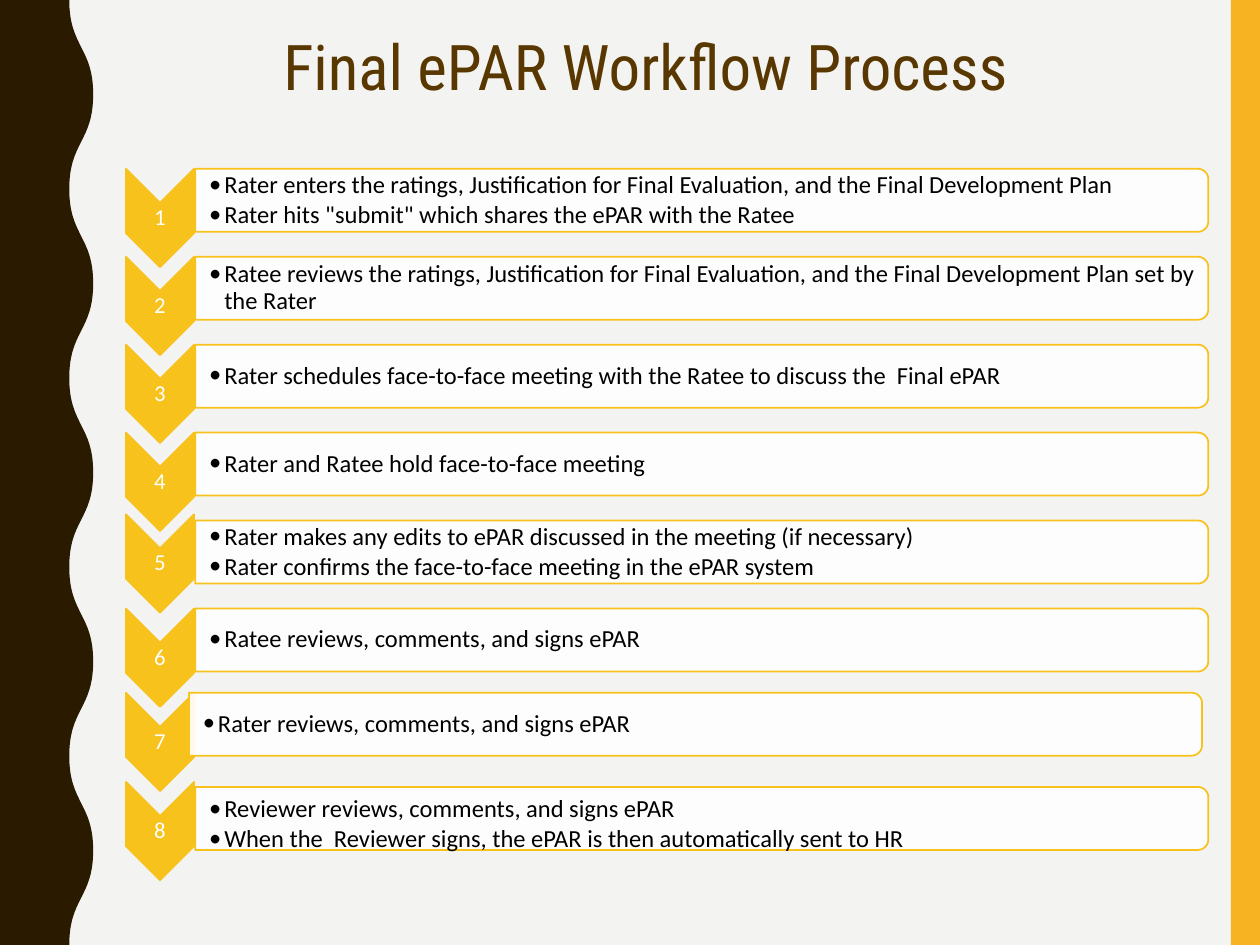
from dataclasses import dataclass

from lxml.etree import Element, SubElement
from pptx import Presentation
from pptx.dml.color import RGBColor
from pptx.enum.shapes import MSO_SHAPE
from pptx.enum.text import MSO_ANCHOR, PP_ALIGN
from pptx.oxml.ns import qn
from pptx.util import Inches, Pt

PAPER = RGBColor(0xF3, 0xF3, 0xF2)
AMBER = RGBColor(0xF8, 0xB3, 0x23)
GOLD = RGBColor(0xF7, 0xC2, 0x1C)
DARK = RGBColor(0x2A, 0x1A, 0x00)
BROWN = RGBColor(0x59, 0x37, 0x00)
WHITE = RGBColor(0xFF, 0xFF, 0xFF)
BLACK = RGBColor(0x00, 0x00, 0x00)

SLIDE_W, SLIDE_H = 10, 7.5
FIRST_ROW, ROW_PITCH = 1.34, 3.49 / 5
ARROW_X, ARROW_W, ARROW_H = 1, 0.54, 0.78
CARD_X, CARD_W, CARD_H = 1.55, 8.04, 0.5
WAVE_IN, WAVE_OUT, HALF_WAVES = 0.55, 0.74, 10
UNITS = 1000  # freeform units per inch


@dataclass(frozen=True)
class Step:
    """One row; the shifts move its parts off the regular grid, in inches."""
    lines: tuple[str, ...]
    card_dx: float = 0
    card_dy: float = 0
    arrow_dy: float = 0
    text_dy: float = 0


STEPS = (
    Step(("Rater enters the ratings, Justification for Final Evaluation, "
          "and the Final Development Plan",
          'Rater hits "submit" which shares the ePAR with the Ratee')),
    Step(("Ratee reviews the ratings, Justification for Final Evaluation, "
          "and the Final Development Plan set by the Rater",)),
    Step(("Rater schedules face-to-face meeting with the Ratee to discuss the  Final ePAR",)),
    Step(("Rater and Ratee hold face-to-face meeting",)),
    Step(("Rater makes any edits to ePAR discussed in the meeting (if necessary)",
          "Rater confirms the face-to-face meeting in the ePAR system"), arrow_dy=-0.05),
    Step(("Ratee reviews, comments, and signs ePAR",)),
    Step(("Rater reviews, comments, and signs ePAR",),
         card_dx=-0.05, card_dy=-0.03, arrow_dy=-0.03),
    Step(("Reviewer reviews, comments, and signs ePAR",
          "When the  Reviewer signs, the ePAR is then automatically sent to HR"),
         card_dy=0.02, arrow_dy=-0.02, text_dy=0.05),
)


def paint(sp, fill: RGBColor, line: RGBColor | None = None) -> None:
    sp.shadow.inherit = False
    sp.fill.solid()
    sp.fill.fore_color.rgb = fill
    if line is None:
        sp.line.fill.background()
    else:
        sp.line.color.rgb = line
        sp.line.width = Pt(1)


def add_turned(slide, kind: MSO_SHAPE, x: float, y: float, w: float, h: float,
               fill: RGBColor):
    """Add a shape turned by 90 degrees that covers the given box as seen."""
    sp = slide.shapes.add_shape(kind, Inches(x + (w - h) / 2), Inches(y + (h - w) / 2),
                                Inches(h), Inches(w))
    sp.rotation = 90
    paint(sp, fill, GOLD)
    return sp


def add_text(slide, x: float, y: float, w: float, h: float, lines: tuple[str, ...],
             size: int, color: RGBColor, font: str = "Calibri"):
    tf = slide.shapes.add_textbox(Inches(x), Inches(y), Inches(w), Inches(h)).text_frame
    tf.word_wrap = True
    for i, line in enumerate(lines):
        p = tf.paragraphs[0] if i == 0 else tf.add_paragraph()
        p.text = line
        p.alignment = PP_ALIGN.CENTER
        p.font.size = Pt(size)
        p.font.name = font
        p.font.color.rgb = color
    return tf


def fit_in_row(tf, left: float) -> None:
    tf.vertical_anchor = MSO_ANCHOR.MIDDLE
    tf.margin_left = Inches(left)
    tf.margin_right = tf.margin_top = tf.margin_bottom = Inches(0.01)
    for p in tf.paragraphs:
        p.line_spacing = 0.9


def add_bullet(p) -> None:
    p.alignment = PP_ALIGN.LEFT
    p.space_after = Pt(2)
    pPr = p._p.get_or_add_pPr()
    pPr.set("marL", str(Inches(0.12)))
    pPr.set("indent", str(-Inches(0.12)))
    defaults = pPr.find(qn("a:defRPr"))
    defaults.addprevious(Element(qn("a:buFont"), typeface="Calibri"))
    defaults.addprevious(Element(qn("a:buChar"), char="•"))


def add_step(slide, row: int, step: Step) -> None:
    top = FIRST_ROW + row * ROW_PITCH
    arrow_y = top + step.arrow_dy
    add_turned(slide, MSO_SHAPE.CHEVRON, ARROW_X, arrow_y, ARROW_W, ARROW_H, GOLD)
    number = add_text(slide, ARROW_X, arrow_y + ARROW_W / 2, ARROW_W, ARROW_H - ARROW_W,
                      (str(row + 1),), 13, WHITE)
    fit_in_row(number, 0.01)

    x, y = CARD_X + step.card_dx, top + step.card_dy
    card = add_turned(slide, MSO_SHAPE.ROUND_2_SAME_RECTANGLE, x, y, CARD_W, CARD_H, WHITE)
    color = card.fill._xPr.find(qn("a:solidFill"))[0]
    SubElement(color, qn("a:alpha")).set("val", "90000")
    tf = add_text(slide, x, y + 0.02 + step.text_dy, CARD_W - 0.03, CARD_H - 0.04,
                  step.lines, 14, BLACK)
    fit_in_row(tf, 0.11)
    for p in tf.paragraphs:
        add_bullet(p)


def add_wave(slide) -> None:
    """Draw the wavy left band: three Bezier points for each half wave."""
    half = SLIDE_H / HALF_WAVES
    points = []
    for i in range(HALF_WAVES):
        start, end = (WAVE_IN, WAVE_OUT) if i % 2 == 0 else (WAVE_OUT, WAVE_IN)
        middle = (i + 0.5) * half
        points += [(start, middle), (end, middle), (end, (i + 1) * half)]
    points += [(0, SLIDE_H), (0, 0)]

    fb = slide.shapes.build_freeform(WAVE_IN * UNITS, 0, scale=Inches(1) / UNITS)
    fb.add_line_segments([(x * UNITS, y * UNITS) for x, y in points])
    sp = fb.convert_to_shape()
    paint(sp, DARK)

    lines = list(sp._element.iter(qn("a:lnTo")))[:3 * HALF_WAVES]
    for i in range(0, len(lines), 3):
        curve = Element(qn("a:cubicBezTo"))
        lines[i].addprevious(curve)
        for line in lines[i:i + 3]:
            curve.append(line[0])
            line.getparent().remove(line)


def main() -> None:
    prs = Presentation()
    prs.slide_width, prs.slide_height = Inches(SLIDE_W), Inches(SLIDE_H)
    slide = prs.slides.add_slide(prs.slide_layouts[6])
    slide.background.fill.solid()
    slide.background.fill.fore_color.rgb = PAPER
    bar = slide.shapes.add_shape(MSO_SHAPE.RECTANGLE, Inches(9.77), 0,
                                 Inches(SLIDE_W - 9.77), Inches(SLIDE_H))
    paint(bar, AMBER)
    add_wave(slide)
    add_text(slide, 0.75, 0.17, 8.75, 0.71, ("Final ePAR Workflow Process",),
             36, BROWN, "Roboto Condensed")
    for row, step in enumerate(STEPS):
        add_step(slide, row, step)
    prs.save("out.pptx")


if __name__ == "__main__":
    main()
